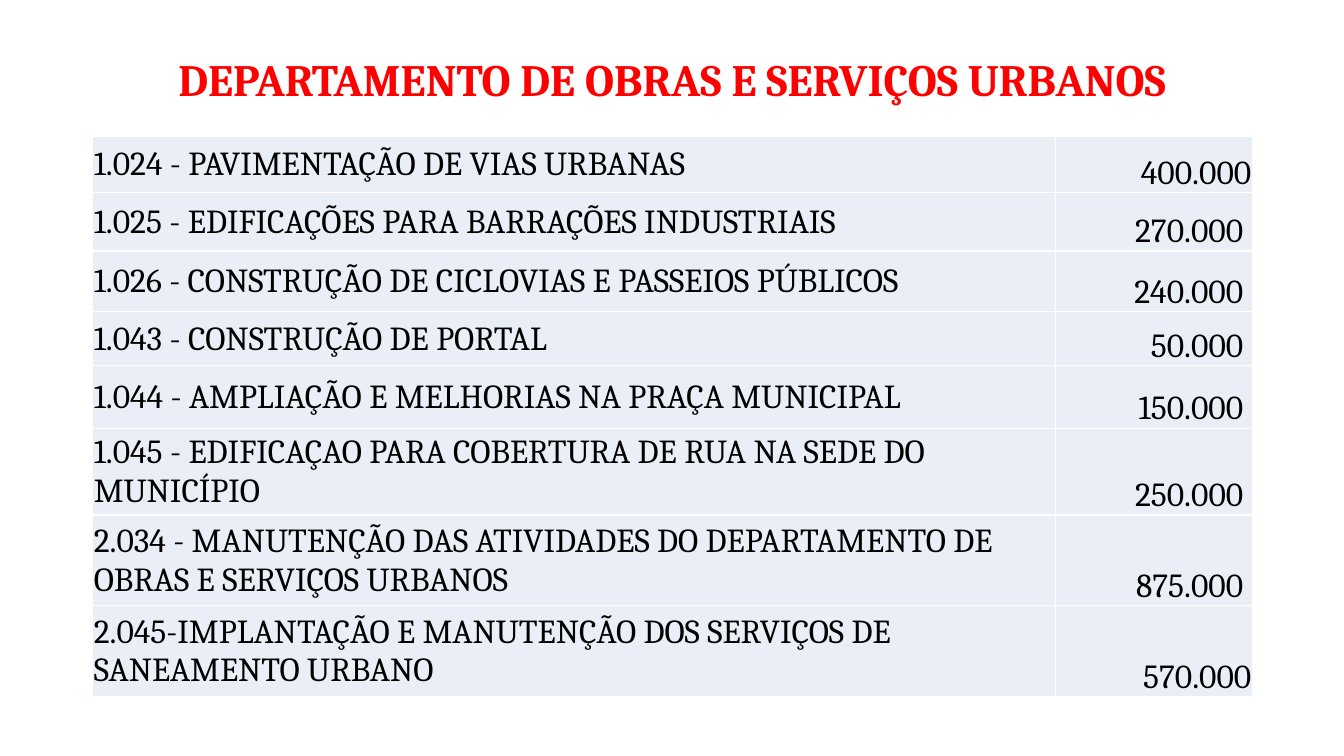
from lxml import etree
from pptx import Presentation
from pptx.dml.color import RGBColor
from pptx.enum.text import MSO_ANCHOR, PP_ALIGN
from pptx.oxml.ns import qn
from pptx.util import Inches, Pt

MIDDLE, BOTTOM = MSO_ANCHOR.MIDDLE, MSO_ANCHOR.BOTTOM
LEFT, CENTER, RIGHT = PP_ALIGN.LEFT, PP_ALIGN.CENTER, PP_ALIGN.RIGHT
COLORS = {"title": "FF0000", "text": "000000", "cell": "EAEFF7", "border": "FFFFFF"}
FONT = "Cambria"
MARGIN_X, CONTENT_WIDTH = 0.92, 11.5
COLUMN_WIDTHS = [9.55, 1.95]
FLUSH, INDENTED = 0.01, 0.09

BUDGET = [
    ("1.024 - PAVIMENTAÇÃO DE VIAS URBANAS", "400.000", 0.56, FLUSH),
    ("1.025 - EDIFICAÇÕES PARA BARRAÇÕES INDUSTRIAIS", "270.000", 0.58, INDENTED),
    ("1.026 - CONSTRUÇÃO DE CICLOVIAS E PASSEIOS PÚBLICOS", "240.000", 0.6, INDENTED),
    ("1.043 - CONSTRUÇÃO DE PORTAL", "50.000", 0.54, INDENTED),
    ("1.044 - AMPLIAÇÃO E MELHORIAS NA PRAÇA MUNICIPAL", "150.000", 0.62, INDENTED),
    ("1.045 - EDIFICAÇAO PARA COBERTURA DE RUA NA SEDE DO MUNICÍPIO",
     "250.000", 0.86, INDENTED),
    ("2.034 - MANUTENÇÃO DAS ATIVIDADES DO DEPARTAMENTO DE OBRAS E SERVIÇOS URBANOS",
     "875.000", 0.9, INDENTED),
    ("2.045-IMPLANTAÇÃO E MANUTENÇÃO DOS SERVIÇOS DE SANEAMENTO URBANO",
     "570.000", 0.9, FLUSH),
]


def write(para, text, size, color, align, bold=False):
    para.alignment = align
    span = para.add_run()
    span.text = text
    span.font.name = FONT
    span.font.size = Pt(size)
    span.font.bold = bold
    span.font.color.rgb = RGBColor.from_string(COLORS[color])


def add_borders(cell):
    properties = cell._tc.get_or_add_tcPr()
    for position, side in enumerate(("a:lnL", "a:lnR", "a:lnT", "a:lnB")):
        line = etree.Element(qn(side), w=str(Pt(1)))
        fill = etree.SubElement(line, qn("a:solidFill"))
        etree.SubElement(fill, qn("a:srgbClr"), val=COLORS["border"])
        properties.insert(position, line)


deck = Presentation()
deck.slide_width, deck.slide_height = Inches(13.33), Inches(7.5)
page = deck.slides.add_slide(deck.slide_layouts[6])

title_box = page.shapes.add_textbox(
    Inches(MARGIN_X), Inches(0.4), Inches(CONTENT_WIDTH), Inches(0.82))
title_frame = title_box.text_frame
title_frame.word_wrap = True
title_frame.vertical_anchor = MIDDLE
title_para = title_frame.paragraphs[0]
title_para.line_spacing = 0.9
write(title_para, "DEPARTAMENTO DE OBRAS E SERVIÇOS URBANOS", 32, "title", CENTER, True)

table = page.shapes.add_table(
    len(BUDGET), len(COLUMN_WIDTHS), Inches(MARGIN_X), Inches(1.35),
    Inches(CONTENT_WIDTH), Inches(sum(entry[2] for entry in BUDGET))).table
table.first_row = False
table.horz_banding = False
for column, width in zip(table.columns, COLUMN_WIDTHS):
    column.width = Inches(width)

for row, (action, amount, height, amount_inset) in zip(table.rows, BUDGET):
    row.height = Inches(height)
    contents = [(action, LEFT, MIDDLE, FLUSH), (amount, RIGHT, BOTTOM, amount_inset)]
    for cell, (text, align, anchor, inset) in zip(row.cells, contents):
        cell.margin_left = cell.margin_top = Inches(FLUSH)
        cell.margin_right = Inches(inset)
        cell.margin_bottom = 0
        cell.vertical_anchor = anchor
        cell.fill.solid()
        cell.fill.fore_color.rgb = RGBColor.from_string(COLORS["cell"])
        add_borders(cell)
        write(cell.text_frame.paragraphs[0], text, 24, "text", align)

deck.save("out.pptx")
